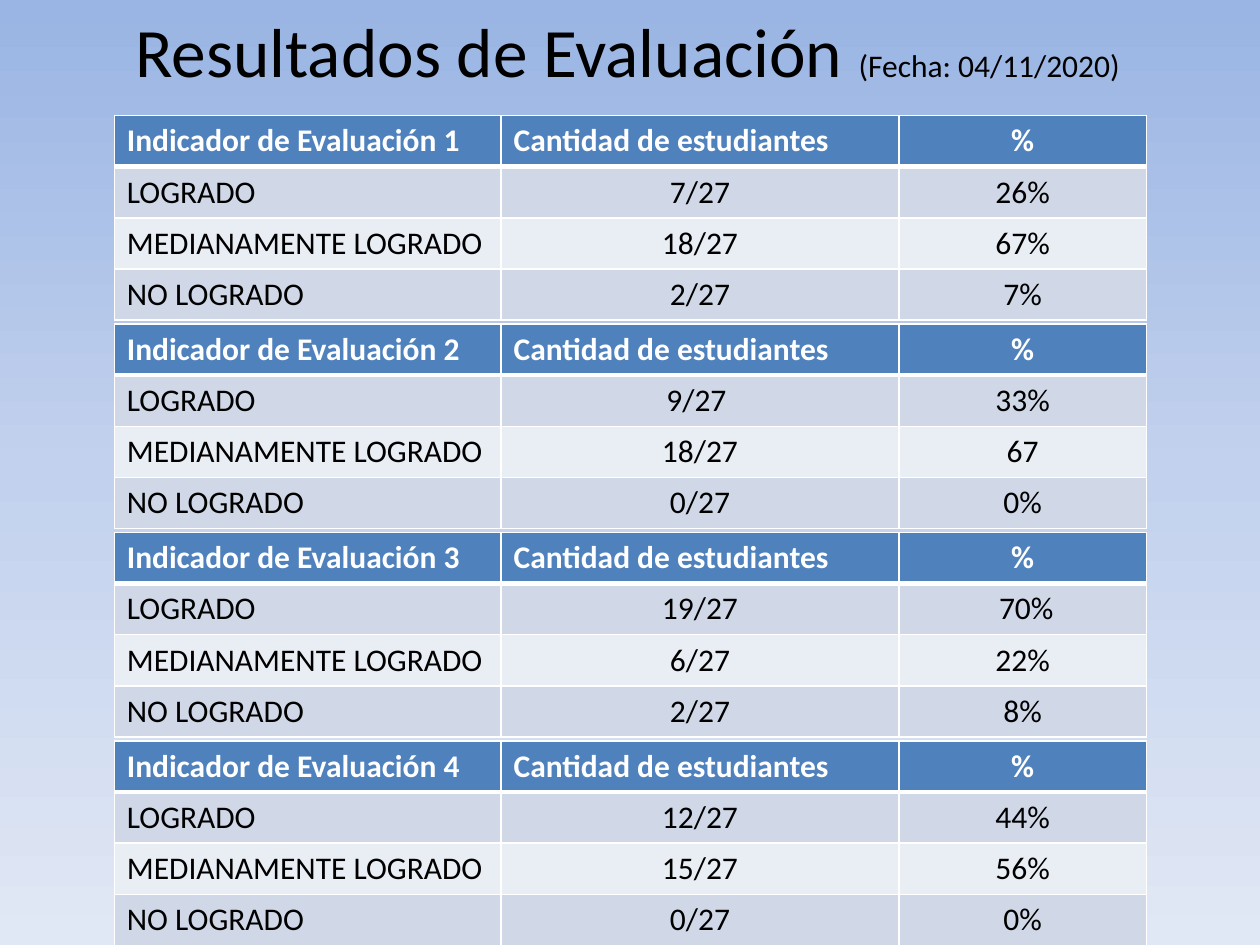
"""Build the evaluation results slide: a title above four indicator tables."""
from copy import deepcopy

from lxml.etree import SubElement
from pptx import Presentation
from pptx.dml.color import RGBColor
from pptx.enum.text import MSO_ANCHOR, PP_ALIGN
from pptx.oxml.ns import qn
from pptx.util import Pt

COLORS = {
    "sky": "9AB5E4", "mid": "C2D1ED", "pale": "E1E8F5",
    "header": "4F81BD", "band": "D0D8E8", "light": "E9EDF4",
    "white": "FFFFFF", "black": "000000",
}
LEFT, FIRST_TOP, PITCH, ROW_HEIGHT = 65.3, 66.1, 119.1, 29.2
COLUMN_WIDTHS = [221, 227.4, 141.4]
LABELS = ["LOGRADO ", "MEDIANAMENTE LOGRADO", "NO LOGRADO "]
RESULTS = [
    [("7/27", "26%"), ("18/27", "67%"), ("2/27", "7%")],
    [("9/27 ", "33%"), ("18/27", "67"), ("0/27", "0%")],
    [("19/27", " 70%"), ("6/27", "22%"), ("2/27", "8%")],
    [("12/27", "44%"), ("15/27", "56%"), ("0/27", "0%")],
]


def add_run(paragraph, text, size, color, bold=False):
    run = paragraph.add_run()
    run.text = text
    font_format = {"name": "Calibri", "size": Pt(size), "bold": bold}
    for name, value in font_format.items():
        setattr(run.font, name, value)
    run.font.color.rgb = RGBColor.from_string(COLORS[color])


def add_borders(cell, widths):
    properties = cell._tc.get_or_add_tcPr()
    for side, width in widths.items():
        line = SubElement(properties, qn(f"a:ln{side}"), w=str(Pt(width)))
        fill = SubElement(line, qn("a:solidFill"))
        SubElement(fill, qn("a:srgbClr"), val=COLORS["white"])


presentation = Presentation()
presentation.slide_width, presentation.slide_height = Pt(720), Pt(540)
slide = presentation.slides.add_slide(presentation.slide_layouts[5])

background = slide.background.fill
background.gradient()
background.gradient_angle = 270
stop_list = slide.element.find(f".//{qn('a:gsLst')}")
stop_list.insert(1, deepcopy(stop_list[0]))
for stop, position, color in zip(background.gradient_stops, (0, 0.5, 1), ("sky", "mid", "pale")):
    stop.position = position
    stop.color.rgb = RGBColor.from_string(COLORS[color])

title = slide.shapes.title
title_place = {"left": 36.7, "top": 0, "width": 648, "height": 56.9}
for name, value in title_place.items():
    setattr(title, name, Pt(value))
title.text_frame.vertical_anchor = MSO_ANCHOR.MIDDLE
heading = title.text_frame.paragraphs[0]
heading.alignment = PP_ALIGN.CENTER
add_run(heading, "Resultados de Evaluación ", 39.6, "black")
add_run(heading, "(Fecha: 04/11/2020) ", 18, "black")

for index, results in enumerate(RESULTS):
    header = (f"Indicador de Evaluación {index + 1}", "Cantidad de estudiantes ", "%")
    rows = [header] + [(label, *values) for label, values in zip(LABELS, results)]
    table = slide.shapes.add_table(
        len(rows), len(COLUMN_WIDTHS), Pt(LEFT), Pt(FIRST_TOP + index * PITCH),
        Pt(sum(COLUMN_WIDTHS)), Pt(ROW_HEIGHT * len(rows))).table
    for column, width in zip(table.columns, COLUMN_WIDTHS):
        column.width = Pt(width)
    for row_index, texts in enumerate(rows):
        table.rows[row_index].height = Pt(ROW_HEIGHT)
        is_header = row_index == 0
        fill_color = "header" if is_header else ("light", "band")[row_index % 2]
        widths = {"L": 1, "R": 1, "T": 3 if row_index == 1 else 1, "B": 3 if is_header else 1}
        for column_index, text in enumerate(texts):
            cell = table.cell(row_index, column_index)
            add_borders(cell, widths)
            cell.fill.solid()
            cell.fill.fore_color.rgb = RGBColor.from_string(COLORS[fill_color])
            paragraph = cell.text_frame.paragraphs[0]
            centered = column_index == 2 or (column_index == 1 and not is_header)
            paragraph.alignment = PP_ALIGN.CENTER if centered else PP_ALIGN.LEFT
            add_run(paragraph, text, 18, "white" if is_header else "black", is_header)

presentation.save("out.pptx")
